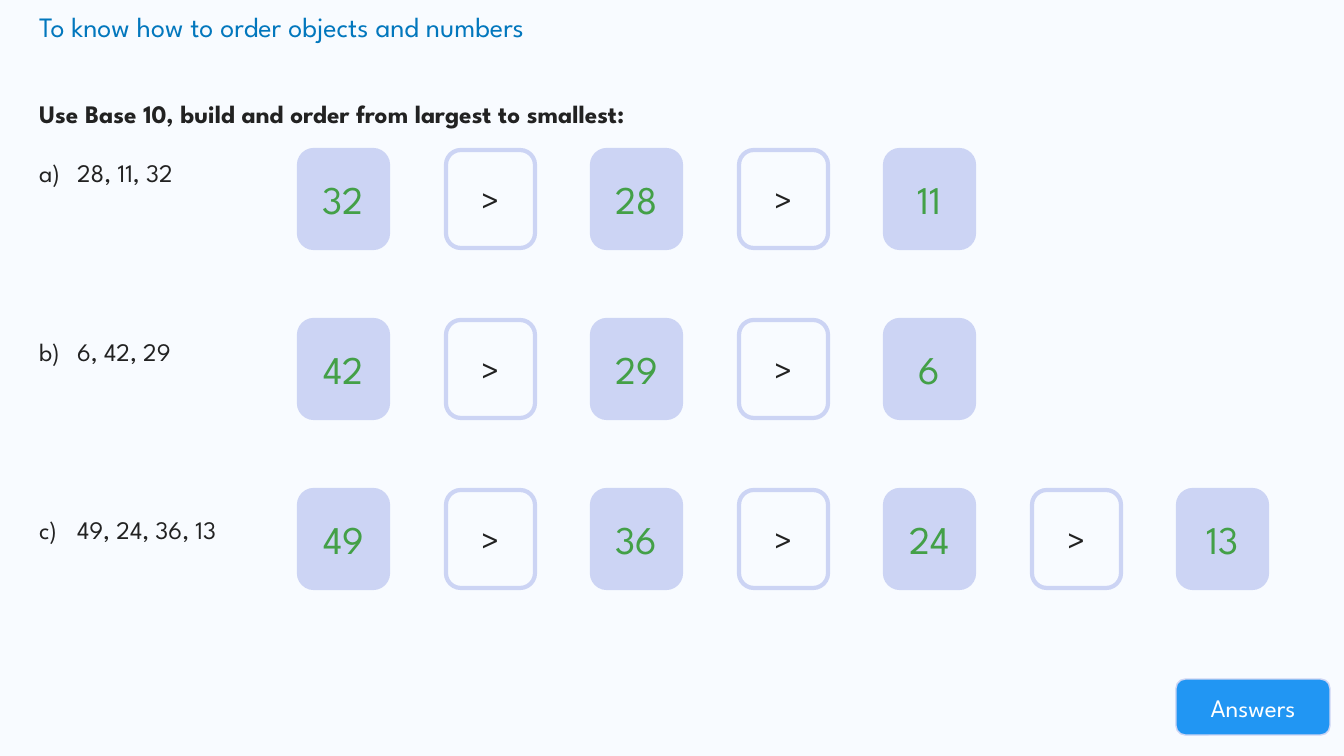
from lxml import etree
from pptx import Presentation
from pptx.dml.color import RGBColor
from pptx.enum.shapes import MSO_SHAPE
from pptx.enum.text import MSO_ANCHOR, MSO_AUTO_SIZE, PP_ALIGN
from pptx.oxml.ns import qn
from pptx.util import Pt

ROUND = MSO_SHAPE.ROUNDED_RECTANGLE
MIDDLE = MSO_ANCHOR.MIDDLE
FIXED = MSO_AUTO_SIZE.NONE
LEFT, CENTER = PP_ALIGN.LEFT, PP_ALIGN.CENTER

PX = 914400 / 100.8
INK, LILAC, GREEN = "222222", "CCD4F4", "43A047"


def style(para, size, color, bold=False, align=LEFT):
    para.alignment = align
    font = para.font
    font.name, font.size, font.bold = "League Spartan", Pt(size), bold
    font.color.rgb = RGBColor.from_string(color)


def add_box(x, y, w, h, fill, line, text, size, color):
    box = slide.shapes.add_shape(ROUND, *(round(n * PX) for n in (x, y, w, h)))
    box.shadow.inherit = False
    if fill:
        box.fill.solid()
        box.fill.fore_color.rgb = RGBColor.from_string(fill)
    else:
        box.fill.background()
    box.line.color.rgb = RGBColor.from_string(LILAC)
    box.line.width = Pt(line)
    frame = box.text_frame
    frame.vertical_anchor = MIDDLE
    frame.text = text
    style(frame.paragraphs[0], size, color, align=CENTER)


deck = Presentation()
deck.slide_width, deck.slide_height = round(1344 * PX), round(756 * PX)
slide = deck.slides.add_slide(deck.slide_layouts[1])
slide.background.fill.solid()
slide.background.fill.fore_color.rgb = RGBColor.from_string("F8FBFF")

title, body = slide.shapes.title, slide.placeholders[1]
for holder, area in ((title, (29, 4, 1244, 44)), (body, (29, 78, 1294, 496))):
    holder.left, holder.top, holder.width, holder.height = (
        round(n * PX) for n in area)
    holder.text_frame.auto_size = FIXED

title.text_frame.text = "To know how to order objects and numbers"
style(title.text_frame.paragraphs[0], 20, "0277BD")

# Each task: the numbers to order, and the space before them in points
tasks = [("28, 11, 32", 10), ("6, 42, 29", 95), ("49, 24, 36, 13", 95)]

frame = body.text_frame
frame.text = "Use Base 10, build and order from largest to smallest:"
head = frame.paragraphs[0]
head.line_spacing, head.space_before = 1.5, Pt(0)
props = head._p.get_or_add_pPr()
props.set("marL", "0")
props.set("indent", "0")
etree.SubElement(props, qn("a:buNone"))
style(head, 18, INK, bold=True)

for text, gap in tasks:
    para = frame.add_paragraph()
    para.text = text
    para.line_spacing, para.space_before = 1.5, Pt(gap)
    props = para._p.get_or_add_pPr()
    indent = round(38 * PX)
    props.set("marL", str(indent))
    props.set("indent", str(-indent))
    etree.SubElement(props, qn("a:buAutoNum"), type="alphaLcParenR")
    style(para, 18, INK)

add_box(1176, 679, 154, 56, "2196F3", 1, "Answers", 18, "FFFFFF")

for row, (text, _) in enumerate(tasks):
    order = sorted(map(int, text.split(", ")), reverse=True)
    y = 150 + 170 * row
    for col, num in enumerate(order):
        x = 299 + 293 * col
        if col:
            add_box(x - 146, y, 89, 98, None, 3, ">", 24, INK)
        add_box(x, y, 89, 98, LILAC, 3, str(num), 28, GREEN)

deck.save("out.pptx")
